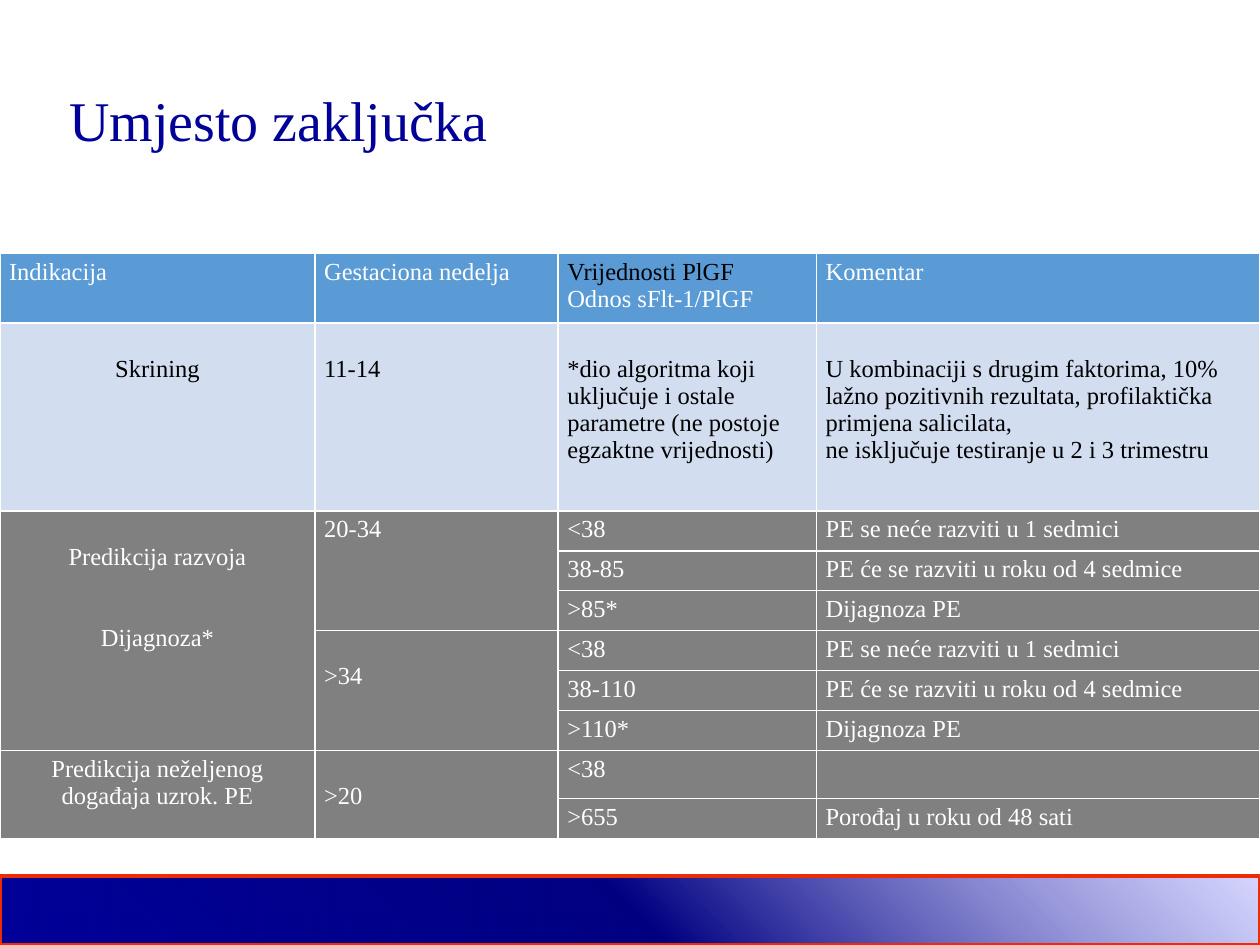
import lxml.etree
import pptx
import pptx.dml.color
import pptx.enum.shapes
import pptx.enum.text
import pptx.oxml
import pptx.oxml.ns
import pptx.util

Pt = pptx.util.Pt
RGBColor = pptx.dml.color.RGBColor
ALIGN = pptx.enum.text.PP_ALIGN
qn = pptx.oxml.ns.qn

WHITE = RGBColor(0xFF, 0xFF, 0xFF)
BLACK = RGBColor(0, 0, 0)
NAVY = RGBColor(0, 0, 0x99)
DARK_NAVY = RGBColor(0, 0, 0x81)
LILAC = RGBColor(0xC4, 0xC4, 0xFF)
RED = RGBColor(0xED, 0x2C, 0x05)
HEADER_BLUE = RGBColor(0x5B, 0x9B, 0xD5)
PALE_BLUE = RGBColor(0xD2, 0xDE, 0xEF)
GREY = RGBColor(0x80, 0x80, 0x80)
FONT = "Times New Roman"
LINE = 15.5  # height of one line of table text


def write(tf, text, size=14, color=WHITE, align=ALIGN.LEFT, gap=0, spacing=None):
    """Fill a text frame, one paragraph per line of text, gap points apart."""
    tf.word_wrap = True
    for i, line in enumerate(text.split("\n")):
        p = tf.paragraphs[0] if i == 0 else tf.add_paragraph()
        p.alignment = align
        if i and gap:
            p.space_before = Pt(gap)
        if spacing:
            p.line_spacing = spacing
        r = p.add_run()
        r.text = line
        r.font.name = FONT
        r.font.size = Pt(size)
        r.font.color.rgb = color


def style_cell(cell, fill):
    """Give a cell thin white borders and a plain fill."""
    tcPr = cell._tc.get_or_add_tcPr()
    for side in ("lnL", "lnR", "lnT", "lnB"):
        ln = lxml.etree.SubElement(tcPr, qn(f"a:{side}"), w=str(Pt(1)))
        solid = lxml.etree.SubElement(ln, qn("a:solidFill"))
        lxml.etree.SubElement(solid, qn("a:srgbClr"), val=str(WHITE))
    cell.fill.solid()
    cell.fill.fore_color.rgb = fill


prs = pptx.Presentation()
prs.slide_width, prs.slide_height = Pt(720), Pt(540)
s = prs.slides.add_slide(prs.slide_layouts[6])

# Footer band
band = s.shapes.add_shape(pptx.enum.shapes.MSO_SHAPE.RECTANGLE,
                          Pt(0), Pt(500.4), Pt(720), Pt(39.6))
band.shadow.inherit = False
band.line.color.rgb = RED
band.line.width = Pt(2.25)
band.fill.gradient()
band.fill.gradient_angle = 225
stops = band._element.spPr.find(qn("a:gradFill")).find(qn("a:gsLst"))
for old in list(stops):
    stops.remove(old)
for pos, color, alpha in ((0, LILAC, 68), (50, DARK_NAVY, 100), (100, NAVY, 100)):
    gs = lxml.etree.SubElement(stops, qn("a:gs"), pos=str(pos * 1000))
    clr = lxml.etree.SubElement(gs, qn("a:srgbClr"), val=str(color))
    if alpha < 100:
        lxml.etree.SubElement(clr, qn("a:alpha"), val=str(alpha * 1000))

# Title
title = s.shapes.add_textbox(Pt(32.4), Pt(58.3), Pt(571.7), Pt(24.5))
title.text_frame.vertical_anchor = pptx.enum.text.MSO_ANCHOR.MIDDLE
write(title.text_frame, "Umjesto zaključka", size=32, color=NAVY, spacing=0.9)

# Table
col_widths = [180, 139, 147.6, 253.4]
row_heights = [39.2, 107.4] + [22.65] * 8
frame = s.shapes.add_table(len(row_heights), len(col_widths),
                           Pt(0), Pt(145), Pt(720), Pt(sum(row_heights)))
table = frame.table
for col, width in zip(table.columns, col_widths):
    col.width = Pt(width)
for row, height in zip(table.rows, row_heights):
    row.height = Pt(height)

for r, row in enumerate(table.rows):
    for cell in row.cells:
        style_cell(cell, (HEADER_BLUE, PALE_BLUE)[r] if r < 2 else GREY)
        cell.margin_left = cell.margin_right = Pt(5.2)
        cell.margin_top = cell.margin_bottom = Pt(3)

for first, last, col in ((2, 7, 0), (2, 4, 1), (5, 7, 1), (8, 9, 0), (8, 9, 1)):
    table.cell(first, col).merge(table.cell(last, col))

# None marks a cell covered by the merged cell above it
rows = [
    ["Indikacija", "Gestaciona nedelja", "Vrijednosti PlGF\nOdnos sFlt-1/PlGF", "Komentar"],
    ["Skrining", "11-14",
     "*dio algoritma koji uključuje i ostale parametre (ne postoje egzaktne vrijednosti)",
     "U kombinaciji s drugim faktorima, 10% lažno pozitivnih rezultata, profilaktička "
     "primjena salicilata,\nne isključuje testiranje u 2 i 3 trimestru"],
    ["Predikcija razvoja\nDijagnoza*", "20-34", "˂38", "PE se neće razviti u 1 sedmici"],
    [None, None, "38-85", "PE će se razviti u roku od 4 sedmice"],
    [None, None, "˃85*", "Dijagnoza PE"],
    [None, "˃34", "˂38", "PE se neće razviti u 1 sedmici"],
    [None, None, "38-110", "PE će se razviti u roku od 4 sedmice"],
    [None, None, "˃110*", "Dijagnoza PE"],
    ["Predikcija neželjenog događaja uzrok. PE", "˃20", "˂38", ""],
    [None, None, "˃655", "Porođaj u roku od 48 sati"],
]
lowered = {(1, 0), (1, 1), (1, 2), (1, 3), (2, 0), (5, 1), (8, 1)}
for r, texts in enumerate(rows):
    for c, text in enumerate(texts):
        if text is None:
            continue
        cell = table.cell(r, c)
        if (r, c) in lowered:
            cell.margin_top = Pt(3 + LINE)
        write(cell.text_frame, text,
              color=BLACK if r == 1 else WHITE,
              align=ALIGN.CENTER if c == 0 and r > 0 else ALIGN.LEFT,
              gap=2 * LINE if (r, c) == (2, 0) else 0)
table.cell(0, 2).text_frame.paragraphs[0].runs[0].font.color.rgb = BLACK

prs.save("out.pptx")
